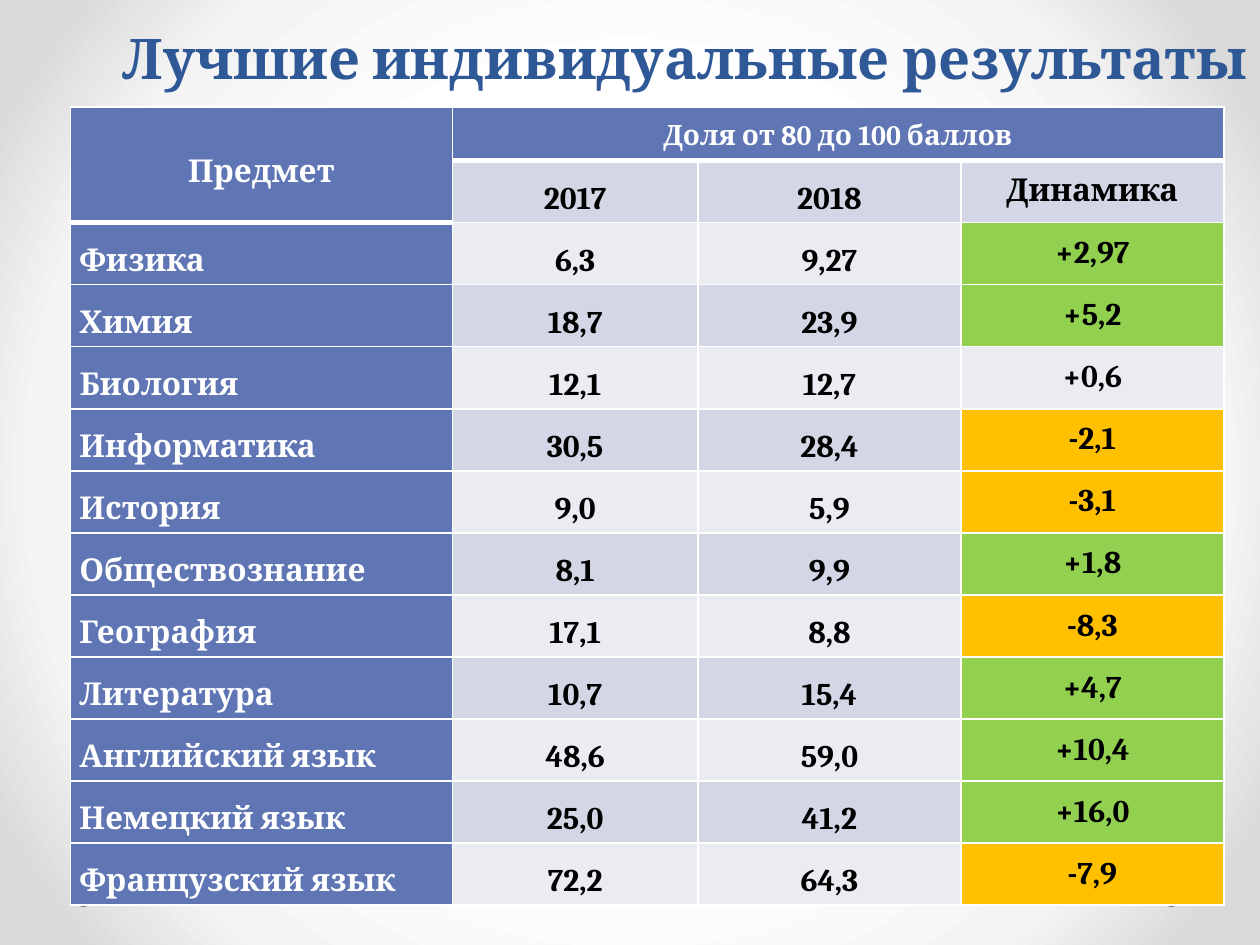
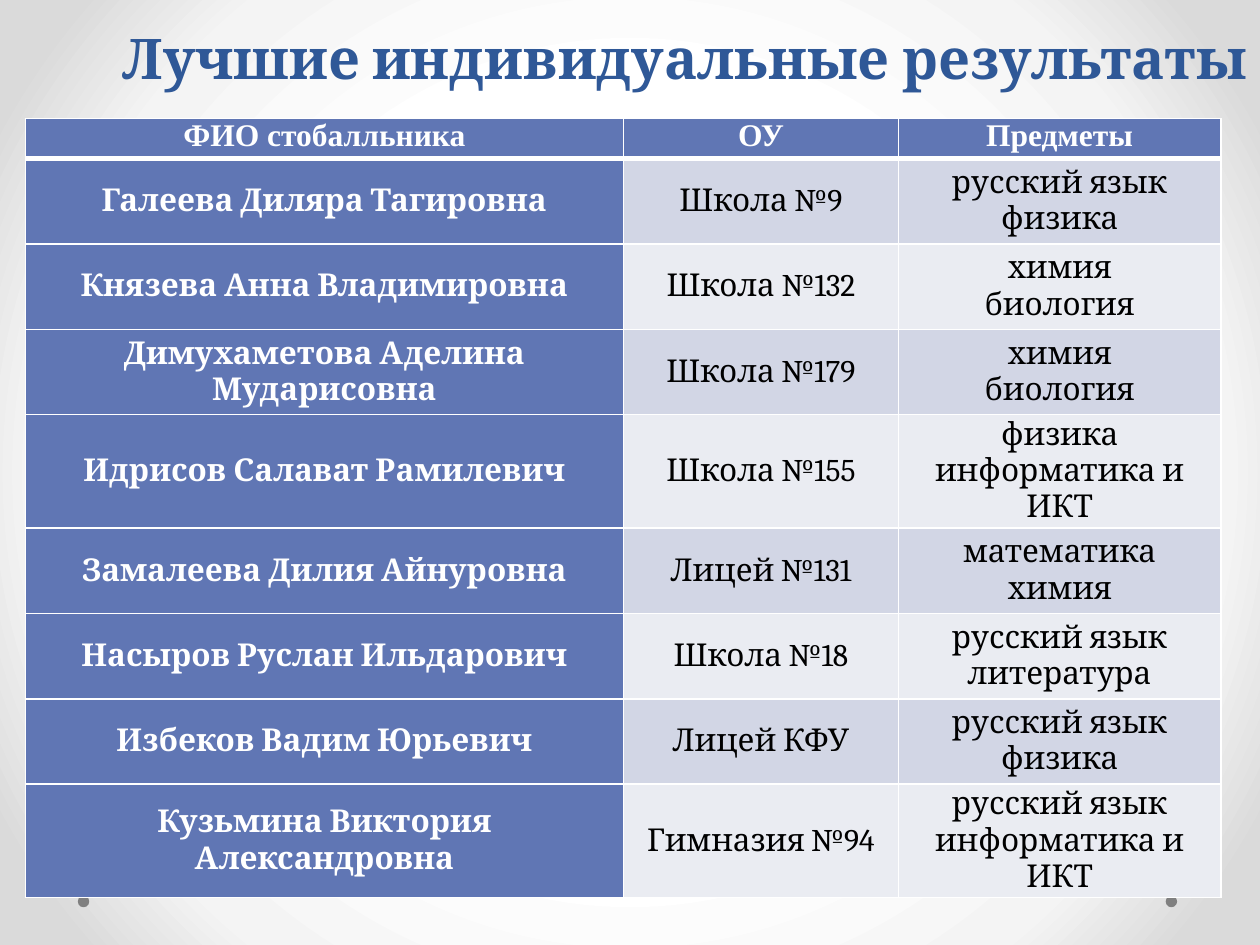
from dataclasses import dataclass

from pptx import Presentation
from pptx.dml.color import RGBColor as RGB
from pptx.enum.shapes import MSO_SHAPE as Geo
from pptx.enum.text import MSO_ANCHOR as Anchor, PP_ALIGN as Align
from pptx.oxml import parse_xml
from pptx.oxml.ns import nsdecls
from pptx.util import Cm, Pt


@dataclass(frozen=True)
class Theme:
    face: str = "Cambria"
    plain: str = "Times New Roman"
    title: str = "2F5897"
    head: str = "6076B4"
    bands: tuple = ("EAECF2", "D2D6E5")
    up: str = "92D050"
    down: str = "FFC000"
    dot: str = "808080"
    white: str = "FFFFFF"
    black: str = "000000"
    glow: tuple = ((50, "FFFFFF"), (76, "F4F4F4"), (92, "DADADA"))
    big: int = 32
    body: int = 18
    small: int = 16


T = Theme()
TITLE = "Лучшие индивидуальные результаты"

SCORES = [
    ("Физика", "6,3", "9,27", "+2,97"),
    ("Химия", "18,7", "23,9", "+5,2"),
    ("Биология", "12,1", "12,7", "+0,6"),
    ("Информатика", "30,5", "28,4", "-2,1"),
    ("История", "9,0", "5,9", "-3,1"),
    ("Обществознание", "8,1", "9,9", "+1,8"),
    ("География", "17,1", "8,8", "-8,3"),
    ("Литература", "10,7", "15,4", "+4,7"),
    ("Английский язык", "48,6", "59,0", "+10,4"),
    ("Немецкий язык", "25,0", "41,2", "+16,0"),
    ("Французский язык", "72,2", "64,3", "-7,9"),
]

PUPILS = [
    ("Галеева Диляра Тагировна", "Школа №9", "русский язык\nфизика"),
    ("Князева Анна Владимировна", "Школа №132", "химия\nбиология"),
    ("Димухаметова Аделина Мударисовна", "Школа №179", "химия\nбиология"),
    ("Идрисов Салават Рамилевич", "Школа №155", "физика\nинформатика и ИКТ"),
    ("Замалеева Дилия Айнуровна", "Лицей №131", "математика\nхимия"),
    ("Насыров Руслан Ильдарович", "Школа №18", "русский язык\nлитература"),
    ("Избеков Вадим Юрьевич", "Лицей КФУ", "русский язык\nфизика"),
    ("Кузьмина Виктория Александровна", "Гимназия №94",
     "русский язык\nинформатика и ИКТ"),
]


def write(frame, text, color, size=T.body, face=T.face, bold=True,
          align=Align.CENTER, gap=None):
    """Fill a text frame, one paragraph per line of text."""
    frame.text = text
    for para in frame.paragraphs:
        para.alignment = align
        if gap:
            para.line_spacing = gap
        font = para.font
        font.name, font.size, font.bold = face, Pt(size), bold
        font.color.rgb = RGB.from_string(color)


def paint_back(master):
    """Give the master a round glow that all slides inherit."""
    master.background.fill.solid()
    stops = "".join(f'<a:gs pos="{pos * 1000}"><a:srgbClr val="{color}"/></a:gs>'
                    for pos, color in T.glow)
    grad = parse_xml(
        f'<a:gradFill {nsdecls("a")} rotWithShape="1"><a:gsLst>{stops}</a:gsLst>'
        '<a:path path="circle"><a:fillToRect l="50000" t="50000" r="50000" '
        'b="50000"/></a:path></a:gradFill>')
    props = master.element.xpath(".//p:bgPr")[0]
    props.replace(props[0], grad)


def add_dot(slide, left):
    dot = slide.shapes.add_shape(Geo.OVAL, Cm(left), Cm(18.06), Cm(0.23), Cm(0.23))
    dot.shadow.inherit = False
    dot.fill.solid()
    dot.fill.fore_color.rgb = RGB.from_string(T.dot)
    dot.line.fill.background()


def add_page(prs):
    """Add a slide with the shared dots and title."""
    slide = prs.slides.add_slide(prs.slide_layouts[6])
    for left in (23.5, 1.57):
        add_dot(slide, left)
    frame = slide.shapes.add_textbox(0, 0, prs.slide_width, Cm(1.96)).text_frame
    frame.word_wrap = True
    frame.vertical_anchor = Anchor.BOTTOM
    write(frame, TITLE, T.title, T.big, align=Align.RIGHT, gap=Pt(58))
    return slide


def add_grid(slide, left, top, cols, rows):
    grid = slide.shapes.add_table(len(rows), len(cols), Cm(left), Cm(top),
                                  Cm(sum(cols)), Cm(sum(rows))).table
    for col, width in zip(grid.columns, cols):
        col.width = Cm(width)
    for row, height in zip(grid.rows, rows):
        row.height = Cm(height)
    return grid


def add_edge(cell, side, width):
    cell._tc.get_or_add_tcPr().append(parse_xml(
        f'<a:ln{side} {nsdecls("a")} w="{Pt(width)}"><a:solidFill>'
        f'<a:srgbClr val="{T.white}"/></a:solidFill></a:ln{side}>'))


def set_cell(cell, text, fill, color=T.black, top=1, base=1,
             anchor=Anchor.MIDDLE, **style):
    for side, width in zip("LRTB", (1, 1, top, base)):
        add_edge(cell, side, width)
    cell.fill.solid()
    cell.fill.fore_color.rgb = RGB.from_string(fill)
    cell.margin_left = cell.margin_right = Cm(0.18)
    cell.margin_top = cell.margin_bottom = 0
    cell.vertical_anchor = anchor
    if text:
        write(cell.text_frame, text, color, **style)


def set_head(cell, text, **style):
    set_cell(cell, text, T.head, T.white, base=3, **style)


def trend(text, band):
    """Colour a change of at least one point by its sign."""
    change = float(text.replace(",", "."))
    if abs(change) < 1:
        return band
    return T.up if change > 0 else T.down


def fill_scores(slide):
    grid = add_grid(slide, 1.42, 2.16, (7.7, 4.95, 5.3, 5.3),
                    [1.08] + [1.25] * (len(SCORES) + 1))
    grid.cell(0, 0).merge(grid.cell(1, 0))
    grid.cell(0, 1).merge(grid.cell(0, 3))
    set_head(grid.cell(0, 0), "Предмет", gap=1.4)
    set_head(grid.cell(1, 0), "")
    set_head(grid.cell(0, 1), "Доля от 80 до 100 баллов", size=T.small,
             gap=1.4, anchor=Anchor.TOP)
    for col in (2, 3):
        set_head(grid.cell(0, col), "")
    for col, (text, gap) in enumerate(
            (("2017", 1.4), ("2018", 1.4), ("Динамика", None)), 1):
        set_cell(grid.cell(1, col), text, T.bands[1], top=3, gap=gap)
    for row, (name, *years, change) in enumerate(SCORES, 2):
        band = T.bands[row % 2]
        set_cell(grid.cell(row, 0), name, T.head, T.white,
                 top=3 if row == 2 else 1, align=Align.LEFT, gap=1.4)
        for col, value in enumerate(years, 1):
            set_cell(grid.cell(row, col), value, band, gap=1.4)
        set_cell(grid.cell(row, 3), change, trend(change, band))


def fill_pupils(slide):
    grid = add_grid(slide, 0.51, 2.39, (12.06, 5.54, 6.5),
                    [0.81] + [1.72] * len(PUPILS))
    for col, text in enumerate(("ФИО стобалльника", "ОУ", "Предметы")):
        set_head(grid.cell(0, col), text, face=T.plain, anchor=Anchor.TOP)
    for row, (name, *facts) in enumerate(PUPILS, 1):
        top = 3 if row == 1 else 1
        set_cell(grid.cell(row, 0), name, T.head, T.white, top=top)
        for col, text in enumerate(facts, 1):
            set_cell(grid.cell(row, col), text, T.bands[row % 2], top=top,
                     bold=False)


def main():
    prs = Presentation()
    prs.slide_width, prs.slide_height = Cm(25.4), Cm(19.05)
    paint_back(prs.slide_master)
    fill_scores(add_page(prs))
    fill_pupils(add_page(prs))
    prs.save("out.pptx")


if __name__ == "__main__":
    main()
